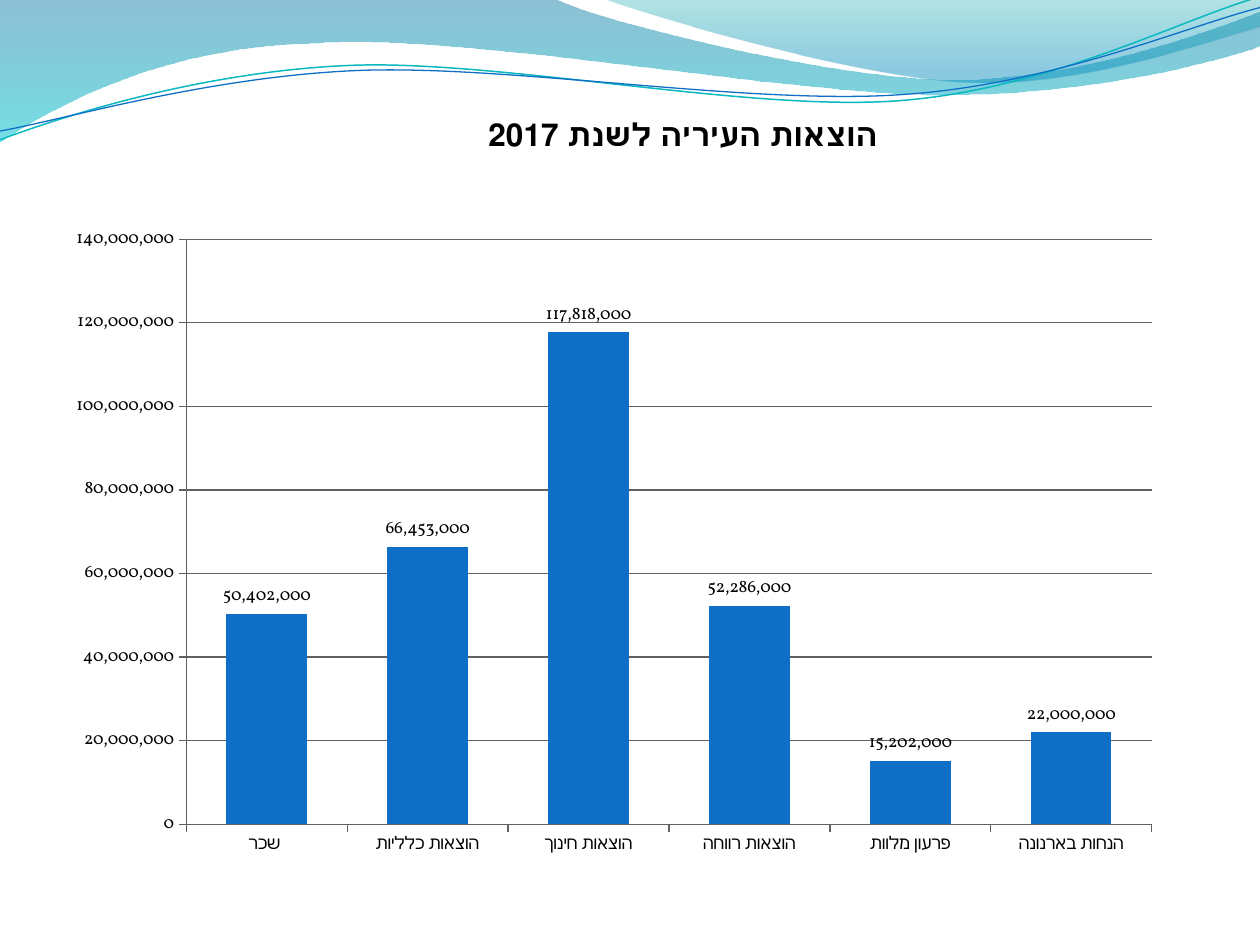
"""Builds a slide with a wave header and a column chart of municipal spending."""
from math import cos, radians, sin

from lxml import etree
from pptx import Presentation
from pptx.chart.data import CategoryChartData
from pptx.dml.color import RGBColor
from pptx.enum.chart import XL_CHART_TYPE, XL_LABEL_POSITION, XL_TICK_MARK
from pptx.oxml import parse_xml
from pptx.oxml.ns import nsdecls, qn
from pptx.util import Cm, Pt

COLUMNS = XL_CHART_TYPE.COLUMN_CLUSTERED
OUTSIDE_END = XL_LABEL_POSITION.OUTSIDE_END
TICK_OUT = XL_TICK_MARK.OUTSIDE
TICK_NONE = XL_TICK_MARK.NONE
BLUE, BLACK, GREY = "0F6FC6", "000000", "606060"


def rgb(value):
    """Turn a hex string into a colour."""
    return RGBColor.from_string(value)


def draw_wave(shapes, box, start, segments, close, tilt=0):
    """Draw an outline in inches; six numbers make a Bezier curve, two a line."""
    left, top, width, height = box
    builder = shapes.build_freeform(0, 0, scale=Cm(2.54))
    builder.add_line_segments([(1, 1)], close=close)
    wave = builder.convert_to_shape()
    wave.left, wave.top, wave.width, wave.height = (Cm(2.54 * length) for length in box)
    wave.rotation = -tilt % 360
    wave.shadow.inherit = False
    outline = next(wave._element.spPr.iter(qn("a:path")))
    for node in list(outline):
        outline.remove(node)
    outline.set("w", str(wave.width))
    outline.set("h", str(wave.height))
    turn = radians(tilt)
    for index, segment in enumerate([start, *segments]):
        tag = "a:moveTo" if index == 0 else "a:lnTo" if len(segment) == 2 else "a:cubicBezTo"
        piece = etree.SubElement(outline, qn(tag))
        for x, y in zip(segment[::2], segment[1::2]):
            dx, dy = x - left - width / 2, y - top - height / 2
            across = width / 2 + dx * cos(turn) - dy * sin(turn)
            down = height / 2 + dx * sin(turn) + dy * cos(turn)
            etree.SubElement(piece, qn("a:pt"), x=str(Cm(2.54 * across)), y=str(Cm(2.54 * down)))
    if close:
        etree.SubElement(outline, qn("a:close"))
    return wave


presentation = Presentation()
presentation.slide_width, presentation.slide_height = Cm(25.4), Cm(19.05)
slide = presentation.slides.add_slide(presentation.slide_layouts[6])

bands = [
    ((-0.01, -0.01, 10.02, 1.14), (0, 0),
     [(4.4, -0.01), (4.76, 0.17, 6.64, 0.63, 7.58, 0.63), (8.53, 0.63, 9.58, 0.26, 10, 0.09),
      (10.01, 0.36), (9.83, 0.44, 8.7, 0.76, 7.46, 0.75), (6.22, 0.75, 3.82, 0.28, 2.57, 0.34),
      (1.29, 0.36, 0.46, 0.83, -0.01, 1.13), (0, 0)],
     [(0, "0074A1", 45), (1, "00C6CF", 55)]),
    ((4.79, -0.01, 5.21, 0.7), (4.79, -0.01),
     [(5.09, 0.11, 6.82, 0.62, 7.69, 0.65), (8.56, 0.69, 9.61, 0.32, 10, 0.21), (10, 0), (4.79, -0.01)],
     [(0, "00A1A9", 30), (0.8, "008BBF", 45)]),
]
for box, start, segments, stops in bands:
    band = draw_wave(slide.shapes, box, start, segments, True)
    band.line.fill.background()
    band.fill.gradient()
    band.fill.gradient_angle = 270
    for stop, (position, color, _) in zip(band.fill.gradient_stops, stops):
        stop.color.rgb = rgb(color)
        stop.position = position
    for color_node, (_, _, opacity) in zip(band._element.spPr.iter(qn("a:srgbClr")), stops):
        etree.SubElement(color_node, qn("a:alpha"), val=str(opacity * 1000))

strands = [
    ((-0.02, 0.22, 10.02, 0.71), (0, 1.11),
     [(0.48, 0.93, 1.58, 0.57, 2.77, 0.52), (3.95, 0.47, 5.93, 0.89, 7.13, 0.8),
      (8.33, 0.71, 9.38, 0.15, 9.98, -0.02)], "0AB8BF", 0.85),
    ((-0.02, 0.3, 10.03, 0.58), (0, 1.04),
     [(0.47, 0.96, 1.64, 0.61, 2.83, 0.56), (4.03, 0.51, 5.97, 0.84, 7.17, 0.75),
      (8.36, 0.67, 9.41, 0.21, 10, 0.06)], BLUE, 0.75),
]
for box, start, segments, color, width in strands:
    strand = draw_wave(slide.shapes, box, start, segments, False, tilt=2.7)
    strand.fill.background()
    strand.line.color.rgb = rgb(color)
    strand.line.width = Pt(width)

spending = CategoryChartData(number_format="#,##0")
spending.categories = ["שכר ", "הוצאות כלליות", "הוצאות חינוך", "הוצאות רווחה", "פרעון מלוות", "הנחות בארנונה"]
spending.add_series("Series 1", [50402000, 66453000, 117818000, 52286000, 15202000, 22000000])
chart = slide.shapes.add_chart(COLUMNS, Cm(1.29), Cm(1.08), Cm(22.82), Cm(16.87), spending).chart
chart.has_legend = False
for name, value in {"name": "Vollkorn", "size": Pt(10)}.items():
    setattr(chart.font, name, value)
chart.font.color.rgb = rgb(BLACK)

heading = chart.chart_title.text_frame.paragraphs[0]
heading_run = heading.add_run()
heading_run.text = "הוצאות העיריה לשנת 2017"
for name, value in {"name": "Vollkorn", "size": Pt(18), "bold": True}.items():
    setattr(heading_run.font, name, value)
heading_run.font.color.rgb = rgb(BLACK)
heading._p.get_or_add_pPr().set("rtl", "1")
chart.chart_title.include_in_layout = True

title_node = chart.chart_title._element
plot_area = chart._chartSpace.chart.plotArea
title_place = {"xMode": "edge", "yMode": "edge", "x": 0.37, "y": 0.07}
plot_place = {"layoutTarget": "inner", "xMode": "edge", "yMode": "edge",
              "x": 0.108, "y": 0.222, "w": 0.853, "h": 0.699}
for parent, index, place in [(title_node, 1, title_place), (plot_area, 0, plot_place)]:
    for old_layout in parent.findall(qn("c:layout")):
        parent.remove(old_layout)
    settings = "".join(f'<c:{key} val="{value}"/>' for key, value in place.items())
    parent.insert(index, parse_xml(
        f'<c:layout {nsdecls("c")}><c:manualLayout>{settings}</c:manualLayout></c:layout>'))

amounts = chart.value_axis
for name, value in {"minimum_scale": 0, "maximum_scale": 140000000, "major_unit": 20000000,
                    "has_major_gridlines": True}.items():
    setattr(amounts, name, value)
amounts.tick_labels.number_format = "#,##0"
amounts.tick_labels.number_format_is_linked = False
for axis in (amounts, chart.category_axis):
    axis.major_tick_mark = TICK_OUT
    axis.minor_tick_mark = TICK_NONE
for ruled in (amounts, chart.category_axis, amounts.major_gridlines):
    ruled.format.line.color.rgb = rgb(GREY)
    ruled.format.line.width = Pt(0.75)

columns = chart.plots[0]
for name, value in {"gap_width": 100, "vary_by_categories": False, "has_data_labels": True}.items():
    setattr(columns, name, value)
for name, value in {"show_value": True, "position": OUTSIDE_END, "number_format": "#,##0",
                    "number_format_is_linked": False}.items():
    setattr(columns.data_labels, name, value)
columns.series[0].format.fill.solid()
columns.series[0].format.fill.fore_color.rgb = rgb(BLUE)

presentation.save("out.pptx")
